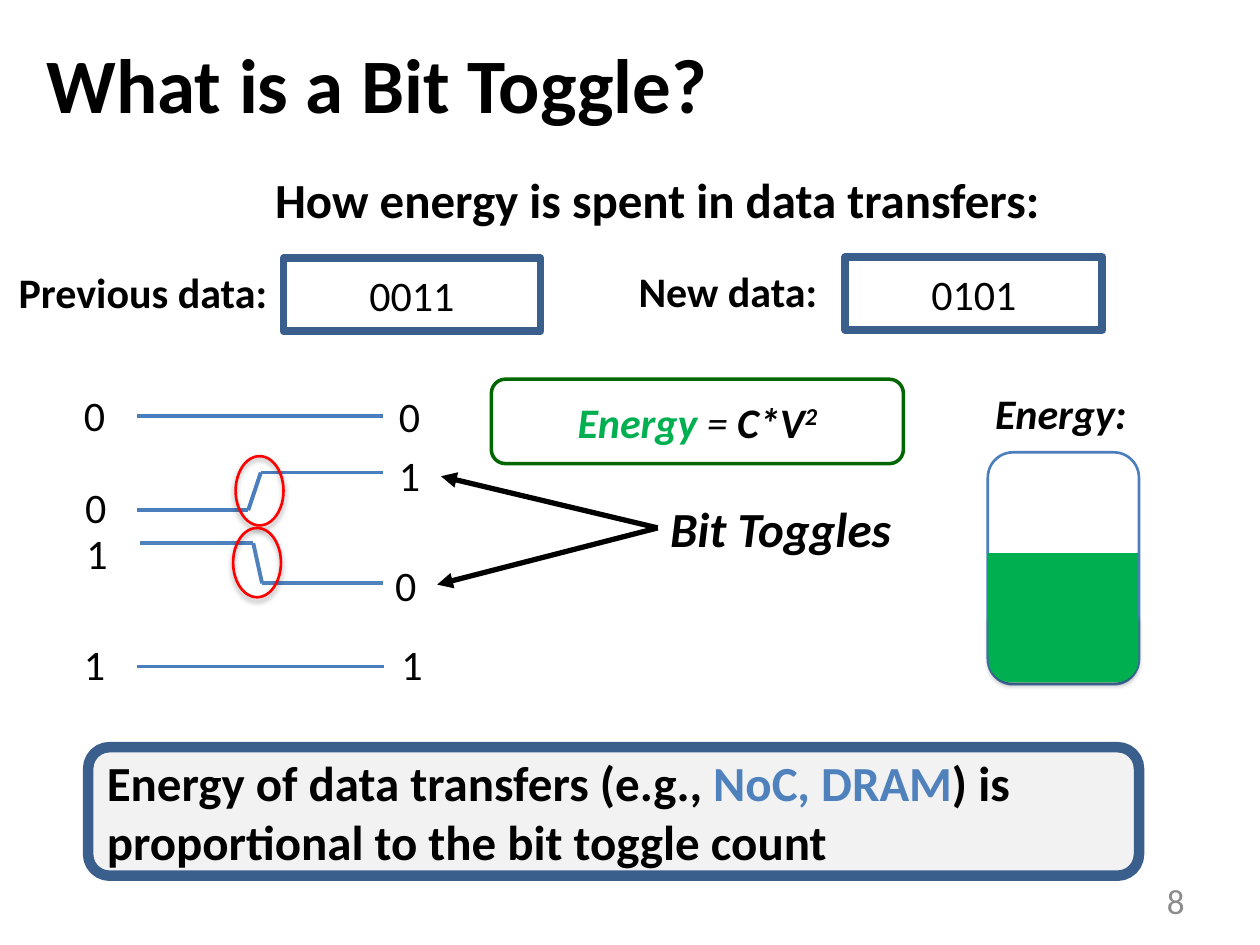
from lxml.etree import SubElement
from pptx import Presentation
from pptx.dml.color import RGBColor
from pptx.enum.shapes import MSO_CONNECTOR, MSO_SHAPE
from pptx.enum.text import MSO_ANCHOR, MSO_AUTO_SIZE, PP_ALIGN
from pptx.oxml.ns import qn
from pptx.util import Inches, Pt

BLACK = RGBColor(0x00, 0x00, 0x00)
GRAY = RGBColor(0x8C, 0x8C, 0x8C)
PALE = RGBColor(0xF2, 0xF2, 0xF2)
NAVY = RGBColor(0x3A, 0x5F, 0x8C)
WIRE = RGBColor(0x4B, 0x7E, 0xBC)
BLUE = RGBColor(0x4F, 0x81, 0xBD)
GREEN = RGBColor(0x00, 0xB0, 0x50)
FOREST = RGBColor(0x00, 0x66, 0x00)
RED = RGBColor(0xFF, 0x00, 0x00)

COLUMNS, ROWS = 100, 75


class Slide:
    font = "Calibri"

    def __init__(self, deck):
        self.column = deck.slide_width / COLUMNS
        self.row = deck.slide_height / ROWS
        self.slide = deck.slides.add_slide(deck.slide_layouts[5])
        self.shapes = self.slide.shapes

    def at(self, *lengths):
        units = (self.column, self.row) * 2
        return [round(length * unit) for length, unit in zip(lengths, units)]

    def add_runs(self, frame, runs, size, align, anchor=MSO_ANCHOR.MIDDLE, wrap=True):
        frame.word_wrap = wrap
        frame.vertical_anchor = anchor
        paragraph = frame.paragraphs[0]
        paragraph.alignment = align
        for words, color, style in runs:
            run = paragraph.add_run()
            run.text = words
            run.font.name = self.font
            run.font.size = Pt(size)
            run.font.color.rgb = color
            run.font.bold = "b" in style
            run.font.italic = "i" in style
            if "^" in style:
                run._r.get_or_add_rPr().set("baseline", "30000")

    def title(self, place, words):
        heading = self.shapes.title
        heading.left, heading.top, heading.width, heading.height = self.at(*place)
        heading.text_frame.auto_size = MSO_AUTO_SIZE.NONE
        self.add_runs(heading.text_frame, [(words, BLACK, "b")], 44, PP_ALIGN.LEFT)

    def text(self, place, words, size=24, style="", color=BLACK,
             align=PP_ALIGN.CENTER, anchor=MSO_ANCHOR.MIDDLE, wrap=True):
        frame = self.shapes.add_textbox(*self.at(*place)).text_frame
        self.add_runs(frame, [(words, color, style)], size, align, anchor, wrap)

    def label(self, place, words, size=24, style="b"):
        self.text(place, words, size, style, align=PP_ALIGN.LEFT,
                  anchor=MSO_ANCHOR.TOP, wrap=False)

    def box(self, kind, place, line, weight, fill=None, runs=(), size=24,
            align=PP_ALIGN.CENTER, shadow=False):
        shape = self.shapes.add_shape(kind, *self.at(*place))
        shape.shadow.inherit = False
        if fill is None:
            shape.fill.background()
        else:
            shape.fill.solid()
            shape.fill.fore_color.rgb = fill
        shape.line.color.rgb = line
        shape.line.width = Pt(weight)
        if runs:
            self.add_runs(shape.text_frame, runs, size, align)
        if shadow:
            effects = shape._element.spPr.find(qn("a:effectLst"))
            outer = SubElement(effects, qn("a:outerShdw"), blurRad=str(Pt(3.1)),
                               dist=str(Pt(1.8)), dir="5400000", rotWithShape="0")
            tint = SubElement(outer, qn("a:srgbClr"), val=str(BLACK))
            SubElement(tint, qn("a:alpha"), val="35000")
        return shape

    def line(self, start, end, color=WIRE, weight=2.25, arrow=False):
        connector = self.shapes.add_connector(
            MSO_CONNECTOR.STRAIGHT, *self.at(*start, *end))
        connector.line.color.rgb = color
        connector.line.width = Pt(weight)
        if arrow:
            SubElement(connector.line._get_or_add_ln(), qn("a:tailEnd"), type="triangle")
        SubElement(connector._element.spPr, qn("a:effectLst"))

    def wire(self, *points, color=WIRE):
        for start, end in zip(points, points[1:]):
            self.line(start, end, color)


def main():
    deck = Presentation()
    deck.slide_width, deck.slide_height = Inches(10), Inches(7.5)
    page = Slide(deck)

    page.title((2.7, 2.1, 90, 8.9), "What is a Bit Toggle?")
    page.text((71.7, 69.5, 23.3, 4), "8", 20, color=GRAY, align=PP_ALIGN.RIGHT)
    page.text((4.3, 13, 95.7, 5.7), "How energy is spent in data transfers:",
              28, "b", anchor=MSO_ANCHOR.TOP)

    for name, name_left, name_width, bits, left, top in (
            ("Previous data:", 0.5, 22, "0011", 22.5, 20.5),
            ("New data:", 49.7, 16.3, "0101", 67.1, 20.4)):
        page.label((name_left, top + 0.15, name_width, 5), name)
        page.box(MSO_SHAPE.RECTANGLE, (left, top, 20.4, 5.8), NAVY, 4.5,
                 runs=[(bits, BLACK, "")])

    for bit, left, top in (
            ("0", 5, 30), ("0", 5.1, 37.3), ("1", 5.2, 41), ("1", 5, 49.8),
            ("0", 30, 30.1), ("1", 30, 34.8), ("0", 29.7, 43.5), ("1", 30.2, 49.8)):
        page.text((left, top, 5, 5.8), bit)

    page.wire((10.9, 33), (30.4, 33))
    page.wire((10.9, 40.5), (19.7, 40.5), (20.7, 37.5), (30.4, 37.5))
    page.wire((11.1, 43.1), (20.1, 43.1), (20.8, 46.3), (30.4, 46.3), color=BLUE)
    page.wire((10.9, 52.9), (30.5, 52.9))

    page.label((52.2, 39.1, 20, 5.7), "Bit Toggles", 28, "bi")
    for tip in ((35, 37.8), (34.7, 46.4)):
        page.line((52.2, 41.9), tip, BLACK, 3, arrow=True)

    page.box(MSO_SHAPE.ROUNDED_RECTANGLE, (39, 30.1, 32.7, 6.7), FOREST, 2, runs=[
        ("Energy", GREEN, "bi"), (" = ", BLACK, "i"),
        ("C*V", BLACK, "bi"), ("2", BLACK, "bi^")])

    page.label((78, 30.3, 12.4, 5), "Energy:", style="bi")
    page.box(MSO_SHAPE.ROUNDED_RECTANGLE, (78.4, 35.9, 12, 18.4), WIRE, 1.5)
    level_base = page.box(MSO_SHAPE.ROUND_2_SAME_RECTANGLE, (78.5, 49, 11.8, 5.1),
                          GREEN, 0.75, GREEN, shadow=True)
    level_base.rotation = 180
    level_base.adjustments[0] = 0.34
    page.box(MSO_SHAPE.RECTANGLE, (78.4, 43.9, 11.9, 5.2), GREEN, 0.75, GREEN)

    for left, top in ((18.7, 36.2), (18.5, 41.9)):
        page.box(MSO_SHAPE.OVAL, (left, top, 3.8, 5.5), RED, 1.5, shadow=True)

    page.box(MSO_SHAPE.ROUNDED_RECTANGLE, (7, 59.3, 83.4, 10.2), NAVY, 6, PALE, [
        ("Energy of data transfers (e.g., ", BLACK, "b"), ("NoC, DRAM", BLUE, "b"),
        (") is proportional to the bit toggle count", BLACK, "b")],
        28, PP_ALIGN.LEFT)

    deck.save("out.pptx")


if __name__ == "__main__":
    main()
